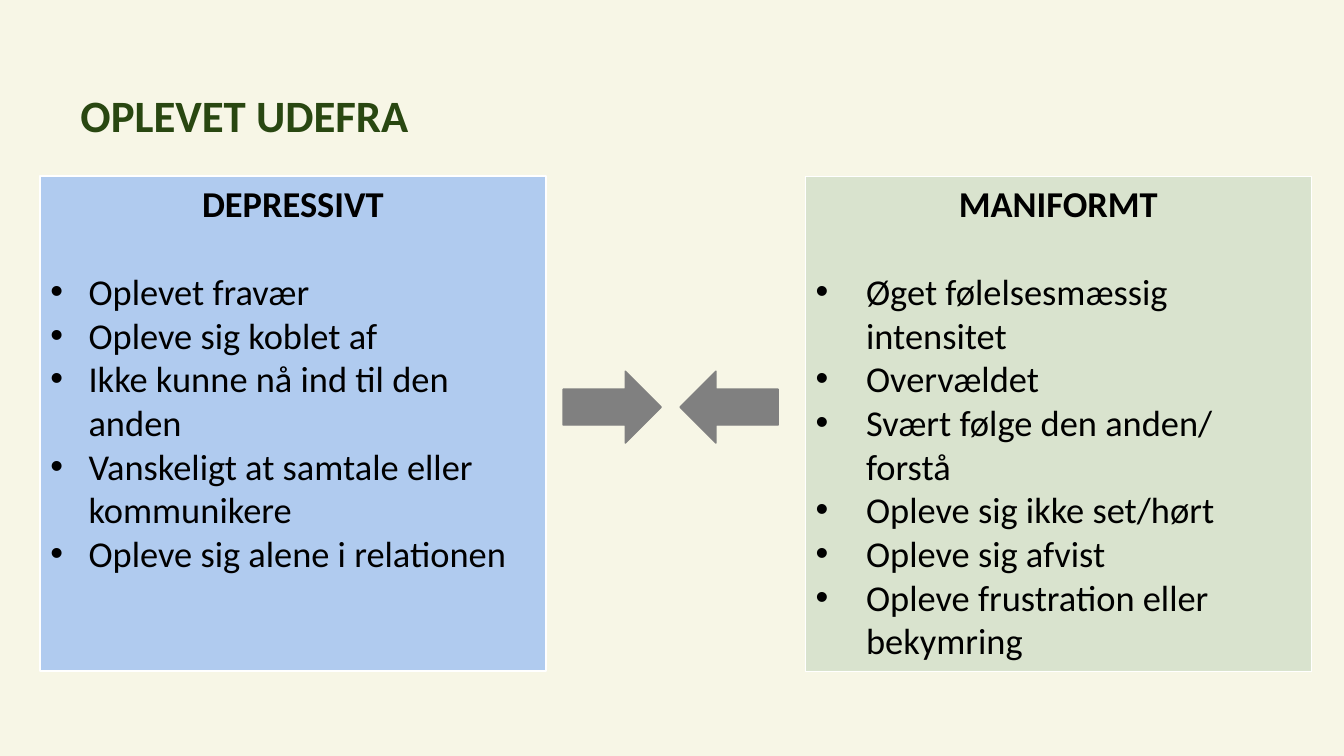
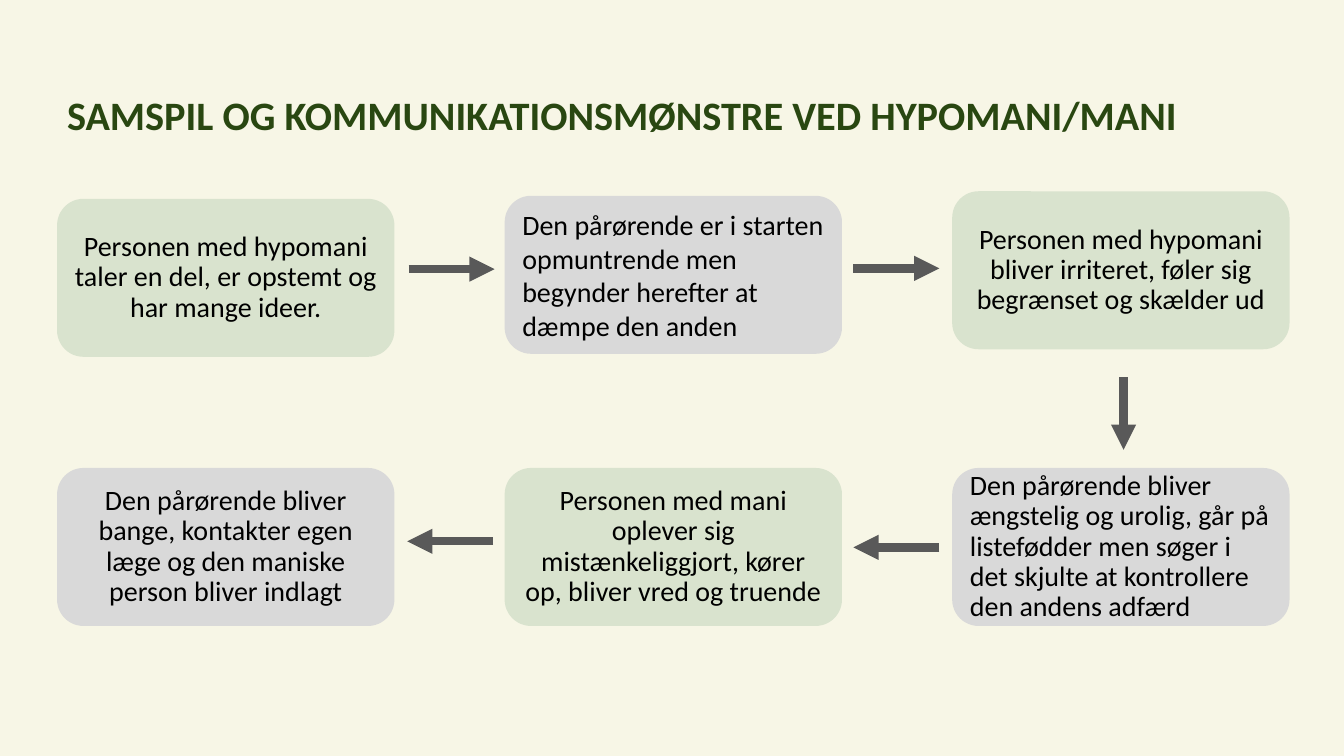
from lxml import etree
from pptx import Presentation
from pptx.dml.color import RGBColor
from pptx.enum.shapes import MSO_CONNECTOR, MSO_SHAPE
from pptx.enum.text import MSO_ANCHOR, PP_ALIGN
from pptx.oxml.ns import qn
from pptx.util import Inches, Pt

RECTANGLE, ROUNDED = MSO_SHAPE.RECTANGLE, MSO_SHAPE.ROUNDED_RECTANGLE
RIGHT_ARROW, LEFT_ARROW = MSO_SHAPE.RIGHT_ARROW, MSO_SHAPE.LEFT_ARROW
STRAIGHT = MSO_CONNECTOR.STRAIGHT
TOP, MIDDLE = MSO_ANCHOR.TOP, MSO_ANCHOR.MIDDLE
LEFT, CENTER = PP_ALIGN.LEFT, PP_ALIGN.CENTER

WIDTH, HEIGHT = Inches(13.33), Inches(7.5)
COLUMN, ROW = WIDTH / 100, HEIGHT / 100
FONT = "Calibri"
CREAM, DARK_GREEN, BLACK, WHITE = "F7F6E6", "294711", "000000", "FFFFFF"
BLUE, GREEN, LIGHT_GRAY = "84B1F5", "D9E3CE", "D9D9D9"
ARROW_GRAY, LINE_GRAY = "808080", "595959"

PANEL_TOP, PANEL_WIDTH, PANEL_HEIGHT = 23.3, 37.6, 65.5
STEP_LEFT, STEP_PITCH, STEP_WIDTH, STEP_HEIGHT = 4.25, 33.3, 25.1, 20.9

DEPRESSIVE = [
    "Oplevet fravær",
    "Opleve sig koblet af",
    "Ikke kunne nå ind til den anden",
    "Vanskeligt at samtale eller kommunikere",
    "Opleve sig alene i relationen",
]
MANIC = [
    "Øget følelsesmæssig intensitet",
    "Overvældet",
    "Svært følge den anden/ forstå",
    "Opleve sig ikke set/hørt",
    "Opleve sig afvist",
    "Opleve frustration eller bekymring",
]
STEPS = [
    (0, 26.3, GREEN, CENTER, 0.9,
     "Personen med hypomani taler en del, er opstemt og har mange ideer."),
    (1, 25.9, LIGHT_GRAY, LEFT, 1,
     "Den pårørende er i starten opmuntrende men begynder herefter at dæmpe den anden"),
    (2, 25.3, GREEN, CENTER, 0.9,
     "Personen med hypomani bliver irriteret, føler sig begrænset og skælder ud"),
    (2, 61.9, LIGHT_GRAY, LEFT, 0.9,
     "Den pårørende bliver ængstelig og urolig, går på listefødder men søger i "
     "det skjulte at kontrollere den andens adfærd"),
    (1, 61.9, GREEN, CENTER, 0.9,
     "Personen med mani oplever sig mistænkeliggjort, kører op, bliver vred og truende"),
    (0, 61.9, LIGHT_GRAY, CENTER, 0.9,
     "Den pårørende bliver bange, kontakter egen læge og den maniske person bliver indlagt"),
]
FLOW = [
    (30.4, 35.6, 36.8, 35.6),
    (63.5, 35.5, 69.9, 35.5),
    (83.6, 49.9, 83.6, 59.5),
    (69.9, 72.4, 63.5, 72.4),
    (36.7, 71.6, 30.3, 71.6),
]


def color(value):
    """Turn a hex string into a colour."""
    return RGBColor.from_string(value)


def grid(left, top, width, height):
    """Turn hundredths of the slide into a position and size."""
    return (round(left * COLUMN), round(top * ROW),
            round(width * COLUMN), round(height * ROW))


def format_text(para, size, ink=BLACK, bold=False, align=LEFT, spacing=1):
    """Format a paragraph and its runs."""
    para.alignment = align
    para.line_spacing = spacing
    for span in para.runs:
        span.font.name = FONT
        span.font.size = Pt(size)
        span.font.bold = bold
        span.font.color.rgb = color(ink)


def add_bullet(para, indent):
    """Give a paragraph a hanging bullet."""
    props = para._p.get_or_add_pPr()
    props.set("marL", str(Inches(indent)))
    props.set("indent", str(-Inches(indent)))
    etree.SubElement(props, qn("a:buFont")).set("typeface", "Arial")
    etree.SubElement(props, qn("a:buChar")).set("char", "•")


def add_title(page, text, left, size):
    """Add the slide title."""
    box = page.shapes.add_textbox(*grid(left, 10.9, 91.5, 9.3))
    frame = box.text_frame
    frame.word_wrap = True
    frame.vertical_anchor = MIDDLE
    frame.text = text
    format_text(frame.paragraphs[0], size, DARK_GREEN, bold=True, spacing=0.9)


def add_block(page, kind, place, fill, line=None, weight=1):
    """Add a filled preset shape with an optional outline."""
    shape = page.shapes.add_shape(kind, *grid(*place))
    shape.shadow.inherit = False
    shape.fill.solid()
    shape.fill.fore_color.rgb = color(fill)
    if line:
        shape.line.color.rgb = color(line)
        shape.line.width = Pt(weight)
    else:
        shape.line.fill.background()
    return shape


def set_opacity(shape, percent):
    """Make the solid fill of a shape partly transparent."""
    tone = shape._element.spPr.find(qn("a:solidFill"))[0]
    etree.SubElement(tone, qn("a:alpha")).set("val", str(percent * 1000))


def add_panel(page, left, fill, weight, heading, items, indent):
    """Add a panel with a centred heading above a bulleted list."""
    place = (left, PANEL_TOP, PANEL_WIDTH, PANEL_HEIGHT)
    panel = add_block(page, RECTANGLE, place, fill, WHITE, weight)
    frame = panel.text_frame
    frame.vertical_anchor = TOP
    frame.text = heading
    format_text(frame.paragraphs[0], 26, bold=True, align=CENTER)
    frame.paragraphs[0].space_after = Pt(31.7)
    for item in items:
        para = frame.add_paragraph()
        para.text = item
        format_text(para, 26)
        add_bullet(para, indent)
    return panel


def add_step(page, column, top, fill, align, spacing, text):
    """Add one rounded step of the pattern."""
    place = (STEP_LEFT + column * STEP_PITCH, top, STEP_WIDTH, STEP_HEIGHT)
    frame = add_block(page, ROUNDED, place, fill).text_frame
    frame.vertical_anchor = MIDDLE
    frame.text = text
    format_text(frame.paragraphs[0], 20, align=align, spacing=spacing)


def add_arrow(page, start_x, start_y, end_x, end_y):
    """Add a thick line with an arrowhead at its end."""
    ends = grid(start_x, start_y, end_x, end_y)
    arrow = page.shapes.add_connector(STRAIGHT, *ends)
    arrow.line.color.rgb = color(LINE_GRAY)
    arrow.line.width = Pt(6)
    etree.SubElement(arrow.line._ln, qn("a:tailEnd")).set("type", "triangle")
    etree.SubElement(arrow._element.spPr, qn("a:effectLst"))


def build_outside_view(page):
    """Build the comparison of the two states."""
    panel = add_panel(page, 3, BLUE, 1.5, "DEPRESSIVT", DEPRESSIVE, 0.38)
    set_opacity(panel, 61)
    add_panel(page, 59.95, GREEN, 0.5, "MANIFORMT", MANIC, 0.5)
    for kind, left in ((RIGHT_ARROW, 41.9), (LEFT_ARROW, 50.6)):
        add_block(page, kind, (left, 49.1, 7.3, 9.5), ARROW_GRAY, ARROW_GRAY)
    add_title(page, "OPLEVET UDEFRA", 5.25, 32)


def build_pattern(page):
    """Build the chain of interaction steps."""
    add_title(page, "SAMSPIL OG KOMMUNIKATIONSMØNSTRE VED HYPOMANI/MANI", 4.25, 28.8)
    for step in STEPS:
        add_step(page, *step)
    for ends in FLOW:
        add_arrow(page, *ends)


def main():
    """Build and save the deck."""
    deck = Presentation()
    deck.slide_width, deck.slide_height = WIDTH, HEIGHT
    backdrop = deck.slide_master.background.fill
    backdrop.solid()
    backdrop.fore_color.rgb = color(CREAM)
    for build in (build_outside_view, build_pattern):
        build(deck.slides.add_slide(deck.slide_layouts[6]))
    deck.save("out.pptx")


if __name__ == "__main__":
    main()
